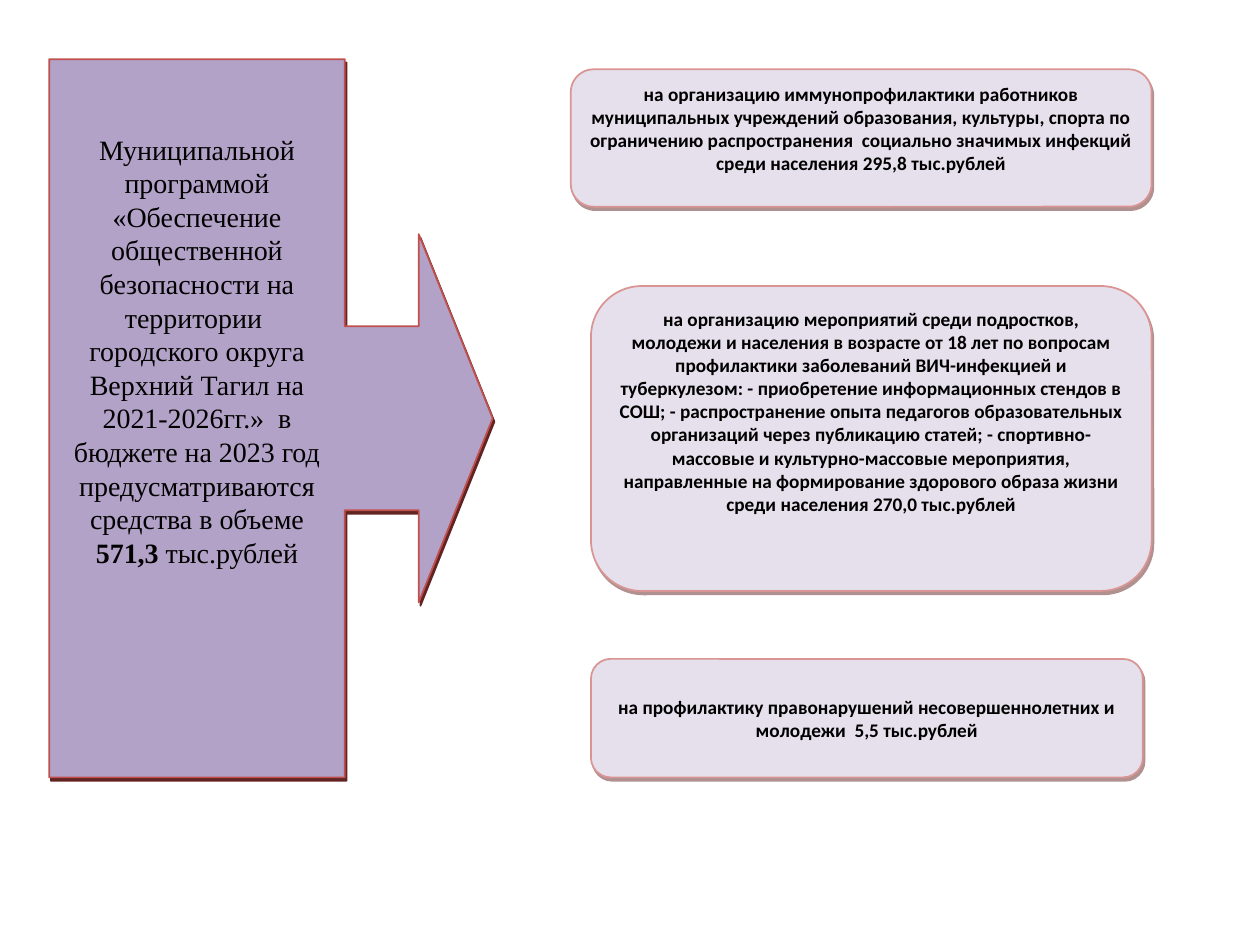
"""Build a slide that splits a programme budget into three spending items."""
from lxml.etree import SubElement
from pptx import Presentation
from pptx.dml.color import RGBColor
from pptx.enum.shapes import MSO_SHAPE as Shape
from pptx.enum.text import MSO_ANCHOR as Anchor, PP_ALIGN as Align
from pptx.oxml.ns import qn
from pptx.util import Inches, Pt

WIDTH, HEIGHT = 10, 7.5
SHADOW = "622423"
PROGRAMME = [
    [("Муниципальной программой «Обеспечение общественной безопасности на территории  "
      "городского округа Верхний Тагил на 2021-2026гг.»  в бюджете на 2023 год "
      "предусматриваются средства в объеме", False)],
    [("571,3 ", True), ("тыс.рублей", False)],
]
EXPENSES = [
    ("на организацию иммунопрофилактики работников муниципальных учреждений образования, "
     "культуры, спорта по ограничению распространения  социально значимых инфекций "
     "среди населения 295,8 тыс.рублей", (4.53, 0.55, 4.61, 1.09), 0.05),
    ("на организацию мероприятий среди подростков, молодежи и населения в возрасте от 18 лет "
     "по вопросам профилактики заболеваний ВИЧ-инфекцией и туберкулезом: - приобретение "
     "информационных стендов в СОШ; - распространение опыта педагогов образовательных "
     "организаций через публикацию статей; - спортивно-массовые и культурно-массовые "
     "мероприятия, направленные на формирование здорового образа жизни среди населения "
     "270,0 тыс.рублей", (4.69, 2.27, 4.45, 2.42), 0.05),
    ("на профилактику правонарушений несовершеннолетних и молодежи  5,5 тыс.рублей",
     (4.69, 5.23, 4.38, 0.94), 0.24),
]
PROGRAMME_STYLE = dict(fill="B3A2C7", line="C0504D", opacity=100,
                       font="Times New Roman", size=16, leading=19.2)
EXPENSE_STYLE = dict(fill="E6E0EC", line="D99594", opacity=50,
                     font="Calibri", size=11, leading=13.2)


def color(value):
    return RGBColor.from_string(value)


def add_shadow(block, opacity):
    block.shadow.inherit = False
    effects = block._element.spPr.find(qn("a:effectLst"))
    shadow = SubElement(effects, qn("a:outerShdw"), blurRad="0", dist=str(Pt(2.2)),
                        dir=str(63 * 60000), algn="ctr", rotWithShape="0")
    tint = SubElement(shadow, qn("a:srgbClr"), val=SHADOW)
    SubElement(tint, qn("a:alpha"), val=str(opacity * 1000))


def add_block(slide, preset, place, adjustments, paragraphs, top_inset, style):
    block = slide.shapes.add_shape(preset, *map(Inches, place))
    for index, share in enumerate(adjustments):
        block.adjustments[index] = share
    block.fill.solid()
    block.fill.fore_color.rgb = color(style["fill"])
    block.line.color.rgb = color(style["line"])
    block.line.width = Pt(1)
    add_shadow(block, style["opacity"])

    frame = block.text_frame
    frame.word_wrap = True
    frame.vertical_anchor = Anchor.TOP
    frame.margin_top = Inches(top_inset)
    for index, runs in enumerate(paragraphs):
        paragraph = frame.add_paragraph() if index else frame.paragraphs[0]
        paragraph.alignment = Align.CENTER
        paragraph.line_spacing = Pt(style["leading"])
        for words, bold in runs:
            run = paragraph.add_run()
            run.text = words
            run.font.name = style["font"]
            run.font.size = Pt(style["size"])
            run.font.bold = bold
            run.font.color.rgb = color("000000")


def main():
    deck = Presentation()
    deck.slide_width, deck.slide_height = Inches(WIDTH), Inches(HEIGHT)
    slide = deck.slides.add_slide(deck.slide_layouts[6])
    add_block(slide, Shape.RIGHT_ARROW_CALLOUT, (0.39, 0.47, 3.52, 5.7),
              (0.415, 0.415, 1 / 6, 2 / 3), PROGRAMME, 0.58, PROGRAMME_STYLE)
    for words, place, top_inset in EXPENSES:
        add_block(slide, Shape.ROUNDED_RECTANGLE, place, (1 / 6,),
                  [[(words, True)]], top_inset, EXPENSE_STYLE)
    deck.save("out.pptx")


if __name__ == "__main__":
    main()
